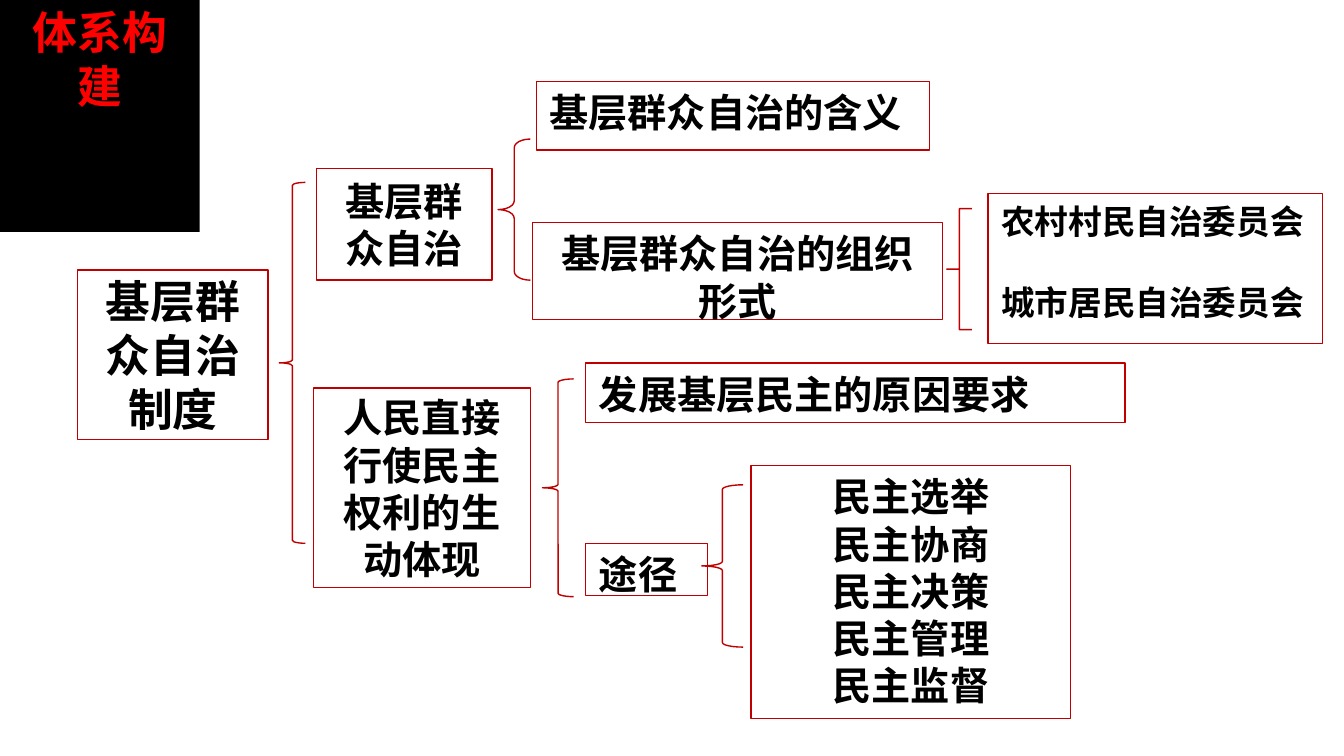
"""Build a slide that maps the system of grassroots self-governance."""
import pptx
import pptx.dml.color
import pptx.enum.shapes
import pptx.enum.text
import pptx.oxml
import pptx.oxml.ns
import pptx.util
from pptx.util import Inches

BLACK = pptx.dml.color.RGBColor(0x00, 0x00, 0x00)
RED = pptx.dml.color.RGBColor(0xFF, 0x00, 0x00)
DARK_RED = pptx.dml.color.RGBColor(0xC0, 0x00, 0x00)
HEADING_FONT = "Arial"
BODY_FONT = "Noto Sans CJK SC"
SHAPE = pptx.enum.shapes.MSO_SHAPE
ALIGN = pptx.enum.text.PP_ALIGN
ANCHOR = pptx.enum.text.MSO_ANCHOR

BOXES = [
    ((0.77, 2.68, 1.89, 1.68), ["基层群众自治制度"], 32, ALIGN.CENTER, ANCHOR.MIDDLE, 0),
    ((3.14, 1.67, 1.74, 1.11), ["基层群众自治"], 28, ALIGN.CENTER, ANCHOR.MIDDLE, 0),
    ((3.11, 3.85, 2.15, 1.98), ["人民直接行使民主权利的生动体现"], 28, ALIGN.CENTER, ANCHOR.MIDDLE, 0),
    ((5.32, 0.81, 3.9, 0.68), ["基层群众自治的含义"], 28, ALIGN.LEFT, ANCHOR.TOP, 0),
    ((5.28, 2.21, 4.07, 0.96), ["基层群众自治的组织形式"], 28, ALIGN.CENTER, ANCHOR.TOP, 0),
    ((9.8, 1.92, 3.32, 1.49), ["农村村民自治委员会", "城市居民自治委员会"], 24, ALIGN.LEFT, ANCHOR.TOP, 29),
    ((5.81, 3.6, 5.35, 0.59), ["发展基层民主的原因要求"], 28, ALIGN.LEFT, ANCHOR.TOP, 0),
    ((5.81, 5.39, 1.21, 0.52), ["途径"], 28, ALIGN.LEFT, ANCHOR.TOP, 0),
    ((7.45, 4.62, 3.17, 2.51), ["民主选举", "民主协商", "民主决策", "民主管理", "民主监督"],
     28, ALIGN.CENTER, ANCHOR.TOP, 0),
]

BRACES = [
    ((2.77, 1.81, 0.26, 3.58), 0.11),
    ((4.94, 1.38, 0.32, 1.4), 0.27),
    ((5.38, 3.76, 0.31, 2.16), 0.11),
    ((6.96, 4.81, 0.41, 1.61), 0.11),
    ((9.39, 2.07, 0.25, 1.2), 0),
]


def format_para(para, size, color, font_name, align):
    para.alignment = align
    for span in para.runs:
        span.font.size = pptx.util.Pt(size)
        span.font.bold = True
        span.font.name = font_name
        span.font.color.rgb = color
        east_asian = pptx.oxml.parse_xml(
            f'<a:ea {pptx.oxml.ns.nsdecls("a")} typeface="{font_name}"/>')
        span.font._element.find(pptx.oxml.ns.qn("a:latin")).addnext(east_asian)


def set_margins(frame, side, end):
    frame.margin_left = frame.margin_right = Inches(side)
    frame.margin_top = frame.margin_bottom = Inches(end)


def add_outline(page, kind, place):
    shape = page.shapes.add_shape(kind, *map(Inches, place))
    shape.shadow.inherit = False
    shape.fill.background()
    shape.line.color.rgb = DARK_RED
    shape.line.width = pptx.util.Pt(1)
    return shape


def add_box(page, place, lines, size, align, anchor, gap):
    frame = add_outline(page, SHAPE.RECTANGLE, place).text_frame
    frame.word_wrap = True
    frame.vertical_anchor = anchor
    set_margins(frame, 0.13, 0.07)
    frame.text = "\n".join(lines)
    for para in frame.paragraphs:
        format_para(para, size, BLACK, BODY_FONT, align)
    for para in frame.paragraphs[1:]:
        para.space_before = pptx.util.Pt(gap)


def add_brace(page, place, curve):
    brace = add_outline(page, SHAPE.LEFT_BRACE, place)
    brace.adjustments[0] = curve
    brace.adjustments[1] = 0.5


def set_title(page, text):
    title = page.shapes.title
    title.left, title.top, title.width, title.height = map(Inches, (0, 0, 1.98, 0.64))
    title.fill.solid()
    title.fill.fore_color.rgb = BLACK
    frame = title.text_frame
    frame.text = text
    frame.word_wrap = False
    frame.auto_size = pptx.enum.text.MSO_AUTO_SIZE.SHAPE_TO_FIT_TEXT
    frame.vertical_anchor = ANCHOR.TOP
    set_margins(frame, 0.1, 0.05)
    format_para(frame.paragraphs[0], 32, RED, HEADING_FONT, ALIGN.CENTER)


def main():
    deck = pptx.Presentation()
    deck.slide_width, deck.slide_height = Inches(13.33), Inches(7.5)
    page = deck.slides.add_slide(deck.slide_layouts[5])
    set_title(page, "体系构建")
    for box in BOXES:
        add_box(page, *box)
    for brace in BRACES:
        add_brace(page, *brace)
    deck.save("out.pptx")


if __name__ == "__main__":
    main()
